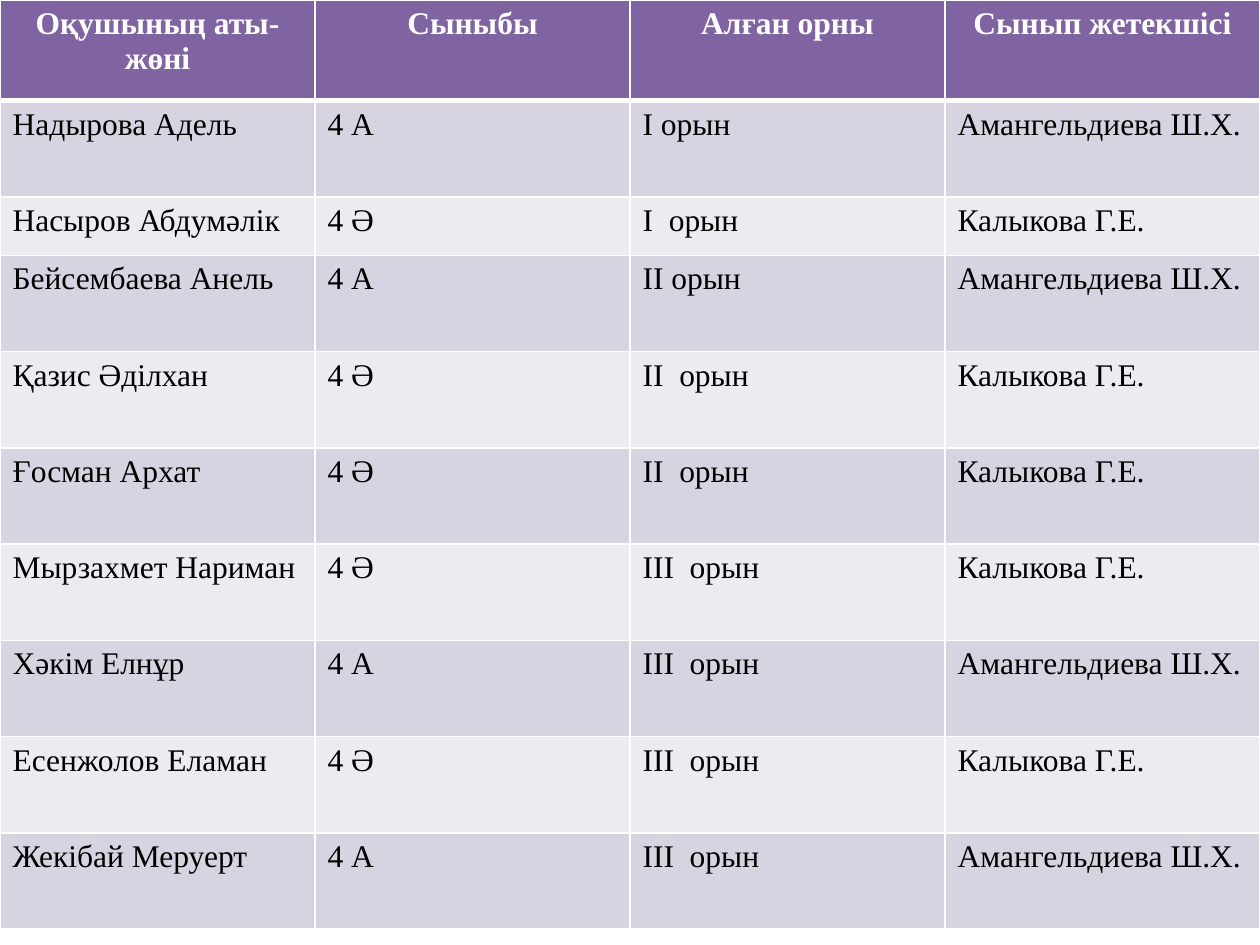
from dataclasses import dataclass

from lxml import etree
from pptx import Presentation
from pptx.dml.color import RGBColor
from pptx.enum.text import PP_ALIGN
from pptx.oxml.ns import qn
from pptx.util import Cm, Pt

CENTER, LEFT = PP_ALIGN.CENTER, PP_ALIGN.LEFT
BLANK_LAYOUT = 6


@dataclass(frozen=True)
class Theme:
    font: str = "Times New Roman"
    text_size: int = 18
    header_fill: str = "8064A2"
    header_text: str = "FFFFFF"
    body_text: str = "000000"
    band_fills: tuple = ("D8D3E0", "EDEAF0")
    border: str = "FFFFFF"
    thin: int = 1
    thick: int = 3


THEME = Theme()

HEADERS = ("Оқушының аты- жөні", "Сыныбы", "Алған орны", "Сынып жетекшісі")
TEACHERS = {"4 А": "Амангельдиева Ш.Х.", "4 Ә": "Калыкова Г.Е."}
RESULTS = (
    ("Надырова Адель", "4 А", "І орын"),
    ("Насыров Абдумәлік", "4 Ә", "І  орын"),
    ("Бейсембаева Анель", "4 А", "ІІ орын"),
    ("Қазис Әділхан", "4 Ә", "ІІ  орын"),
    ("Ғосман Архат", "4 Ә", "ІІ  орын"),
    ("Мырзахмет Нариман", "4 Ә", "ІІІ  орын"),
    ("Хәкім Елнұр", "4 А", "ІІІ  орын"),
    ("Есенжолов Еламан", "4 Ә", "ІІІ  орын"),
    ("Жекібай Меруерт", "4 А", "ІІІ  орын"),
)

# Row heights in centimetres; the second pupil's row is the short one
HEADER_HEIGHT, ROW_HEIGHT, SHORT_HEIGHT = 2.03, 1.94, 1.18
SHORT_ROW = 2


def set_borders(cell, top, bottom):
    """Draw the four cell edges; they must come before the fill."""
    properties = cell._tc.get_or_add_tcPr()
    widths = {"lnL": THEME.thin, "lnR": THEME.thin, "lnT": top, "lnB": bottom}
    for edge, width in widths.items():
        line = etree.SubElement(properties, qn(f"a:{edge}"), w=str(Pt(width)))
        fill = etree.SubElement(line, qn("a:solidFill"))
        etree.SubElement(fill, qn("a:srgbClr"), val=THEME.border)


def fill_cell(cell, color):
    cell.fill.solid()
    cell.fill.fore_color.rgb = RGBColor.from_string(color)


def write_cell(cell, text, color, align, bold):
    para = cell.text_frame.paragraphs[0]
    para.alignment = align
    span = para.add_run()
    span.text = text
    span.font.name = THEME.font
    span.font.size = Pt(THEME.text_size)
    span.font.bold = bold
    span.font.color.rgb = RGBColor.from_string(color)


def style_row(table, index, texts):
    """Write one row; row 0 is the header and the rest are banded."""
    is_header = index == 0
    if is_header:
        background, color, align = THEME.header_fill, THEME.header_text, CENTER
    else:
        background = THEME.band_fills[(index - 1) % 2]
        color, align = THEME.body_text, LEFT
    top = THEME.thick if index == 1 else THEME.thin
    bottom = THEME.thick if is_header else THEME.thin
    for column, text in enumerate(texts):
        cell = table.cell(index, column)
        set_borders(cell, top, bottom)
        fill_cell(cell, background)
        write_cell(cell, text, color, align, is_header)


def add_results_table(page, width):
    rows = [HEADERS] + [(*result, TEACHERS[result[1]]) for result in RESULTS]
    heights = [HEADER_HEIGHT] + [ROW_HEIGHT] * len(RESULTS)
    heights[SHORT_ROW] = SHORT_HEIGHT
    frame = page.shapes.add_table(
        len(rows), len(HEADERS), Cm(0), Cm(0), width, Cm(sum(heights))
    )
    table = frame.table
    for index, (texts, height) in enumerate(zip(rows, heights)):
        table.rows[index].height = Cm(height)
        style_row(table, index, texts)


def main():
    # Page
    deck = Presentation()
    deck.slide_width, deck.slide_height = Cm(25.4), Cm(19.05)
    page = deck.slides.add_slide(deck.slide_layouts[BLANK_LAYOUT])

    # Pupils, classes, places and class teachers
    add_results_table(page, deck.slide_width)

    deck.save("out.pptx")


if __name__ == "__main__":
    main()
